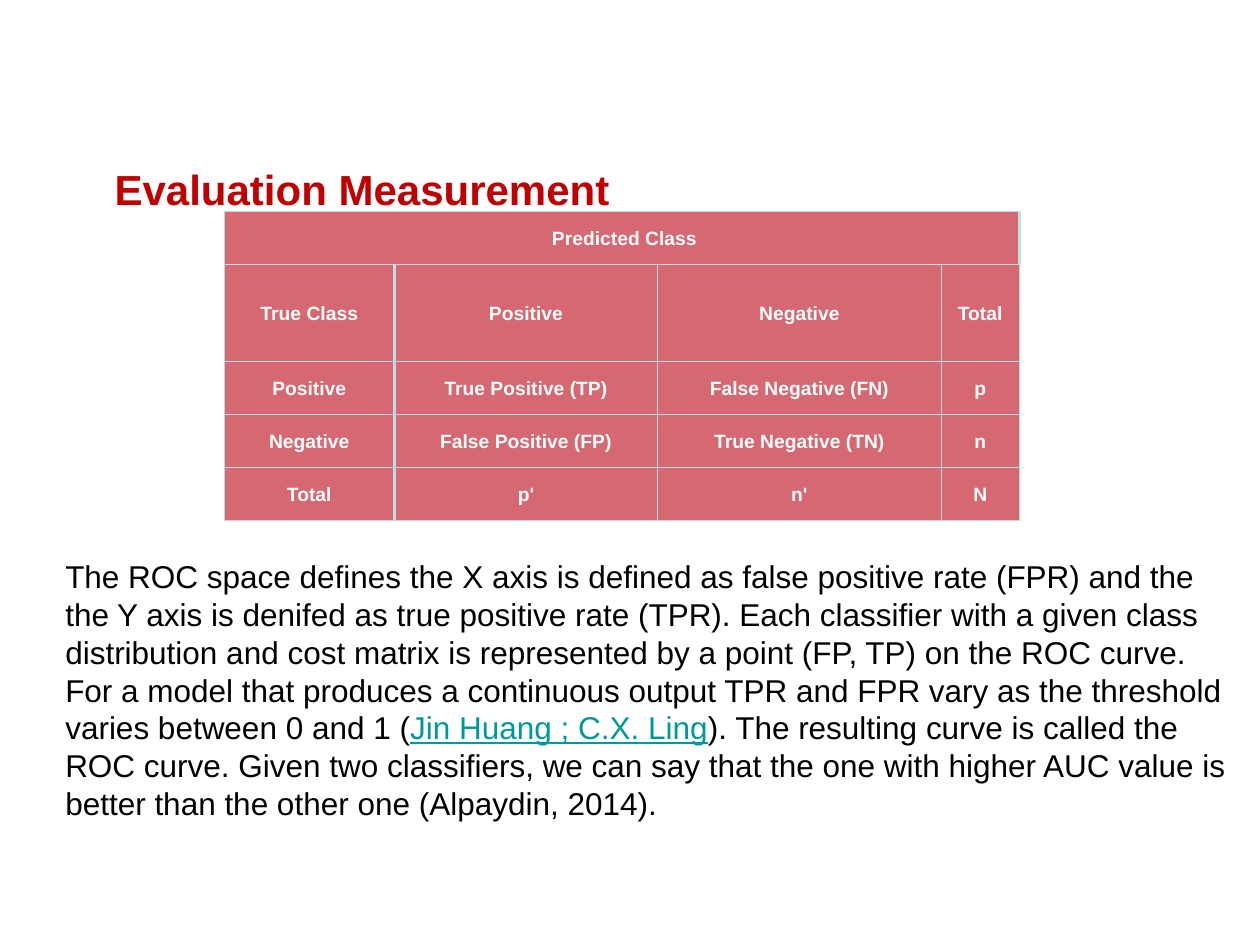
from lxml import etree
from pptx import Presentation
from pptx.dml.color import RGBColor
from pptx.enum.text import MSO_ANCHOR, MSO_AUTO_SIZE, PP_ALIGN
from pptx.oxml.ns import qn
from pptx.util import Inches, Pt

MIDDLE = MSO_ANCHOR.MIDDLE
LEFT, CENTER = PP_ALIGN.LEFT, PP_ALIGN.CENTER
GROW = MSO_AUTO_SIZE.SHAPE_TO_FIT_TEXT
WIDTH, HEIGHT = Inches(10), Inches(7.5)

TITLE_BOX = (0.081, 0.141, 0.869, 0.117)
TABLE_BOX = (0.178, 0.224, 0.631, 0.327)
BODY_BOX = (0.042, 0.583, 0.947, 0.296)

COLUMNS = [1.35, 2.09, 2.25, 0.62]
ROWS = [0.42, 0.77, 0.42, 0.42, 0.42]
MATRIX = [
    ["\u00a0Predicted Class", "", "", ""],
    ["True Class", "Positive", "Negative", "Total"],
    ["Positive", "True Positive (TP)", "False Negative (FN)", "p"],
    ["Negative", "False Positive (FP)", "True Negative (TN)", "n"],
    ["Total", "p'", "n'", "N"],
]
BODY = [
    ("The ROC space defines the X axis is defined as false positive rate (FPR) and the "
     "the Y axis is denifed as true positive rate (TPR). Each classifier with a given class "
     "distribution and cost matrix is represented by a point (FP, TP) on the ROC curve. "
     "For a model that produces a continuous output TPR and FPR vary as the threshold "
     "varies between 0 and 1 (", "000000", False),
    ("Jin Huang ; C.X. Ling", "009999", True),
    ("). The resulting curve is called the ROC curve. Given two classifiers, we can say "
     "that the one with higher AUC value is better than the other one (Alpaydin, 2014).",
     "000000", False),
]


def rgb(value):
    return RGBColor.from_string(value)


def place(box):
    x, y, w, h = box
    return [round(v) for v in (x * WIDTH, y * HEIGHT, w * WIDTH, h * HEIGHT)]


def apply(target, values):
    for name, value in values.items():
        setattr(target, name, value)


def add_run(p, text, size, color, **values):
    r = p.add_run()
    r.text = text
    apply(r.font, {"name": "Arial", "size": Pt(size), **values})
    r.font.color.rgb = rgb(color)


def set_border(cell, side, color, width):
    ln = etree.SubElement(cell._tc.get_or_add_tcPr(), qn(f"a:ln{side}"), w=str(Pt(width)))
    fill = etree.SubElement(ln, qn("a:solidFill"))
    etree.SubElement(fill, qn("a:srgbClr"), val=color)


def add_title(s, box):
    sp = s.shapes.title
    apply(sp, dict(zip(("left", "top", "width", "height"), place(box))))
    tf = sp.text_frame
    apply(tf, {"vertical_anchor": MIDDLE, "word_wrap": True})
    p = tf.paragraphs[0]
    p.alignment = LEFT
    add_run(p, "Evaluation Measurement", 24, "C00000", bold=True)


def format_cell(cell, text, thick_sides):
    for side in "LRTB":
        thick = side in thick_sides
        set_border(cell, side, "BBE0E3" if thick else "B6DCDF", 2 if thick else 0.75)
    cell.fill.solid()
    cell.fill.fore_color.rgb = rgb("D56870")
    apply(cell, {"vertical_anchor": MIDDLE, "margin_left": Inches(0.07),
                 "margin_right": Inches(0.07), "margin_top": 0, "margin_bottom": 0})
    p = cell.text_frame.paragraphs[0]
    apply(p, {"alignment": CENTER, "line_spacing": 1.07})
    if text:
        add_run(p, text, 11, "FFFFFF", bold=True)


def add_matrix(s, box):
    x, y, w, h = place(box)
    table = s.shapes.add_table(len(ROWS), len(COLUMNS), x, y, w, h).table
    for column, share in zip(table.columns, COLUMNS):
        column.width = round(w * share / sum(COLUMNS))
    for row, share in zip(table.rows, ROWS):
        row.height = round(h * share / sum(ROWS))
    table.cell(0, 0).merge(table.cell(0, len(COLUMNS) - 1))
    for i, texts in enumerate(MATRIX):
        thick = {0: "R", 1: "L"} if i else {0: "R", len(COLUMNS) - 1: "R"}
        for j, text in enumerate(texts):
            format_cell(table.cell(i, j), text, thick.get(j, ""))


def add_body(s, box):
    tf = s.shapes.add_textbox(*place(box)).text_frame
    apply(tf, {"word_wrap": True, "auto_size": GROW})
    for text, color, underline in BODY:
        add_run(tf.paragraphs[0], text, 18, color, underline=underline)


def main():
    prs = Presentation()
    apply(prs, {"slide_width": WIDTH, "slide_height": HEIGHT})
    s = prs.slides.add_slide(prs.slide_layouts[5])
    add_title(s, TITLE_BOX)
    add_matrix(s, TABLE_BOX)
    add_body(s, BODY_BOX)
    prs.save("out.pptx")


if __name__ == "__main__":
    main()
